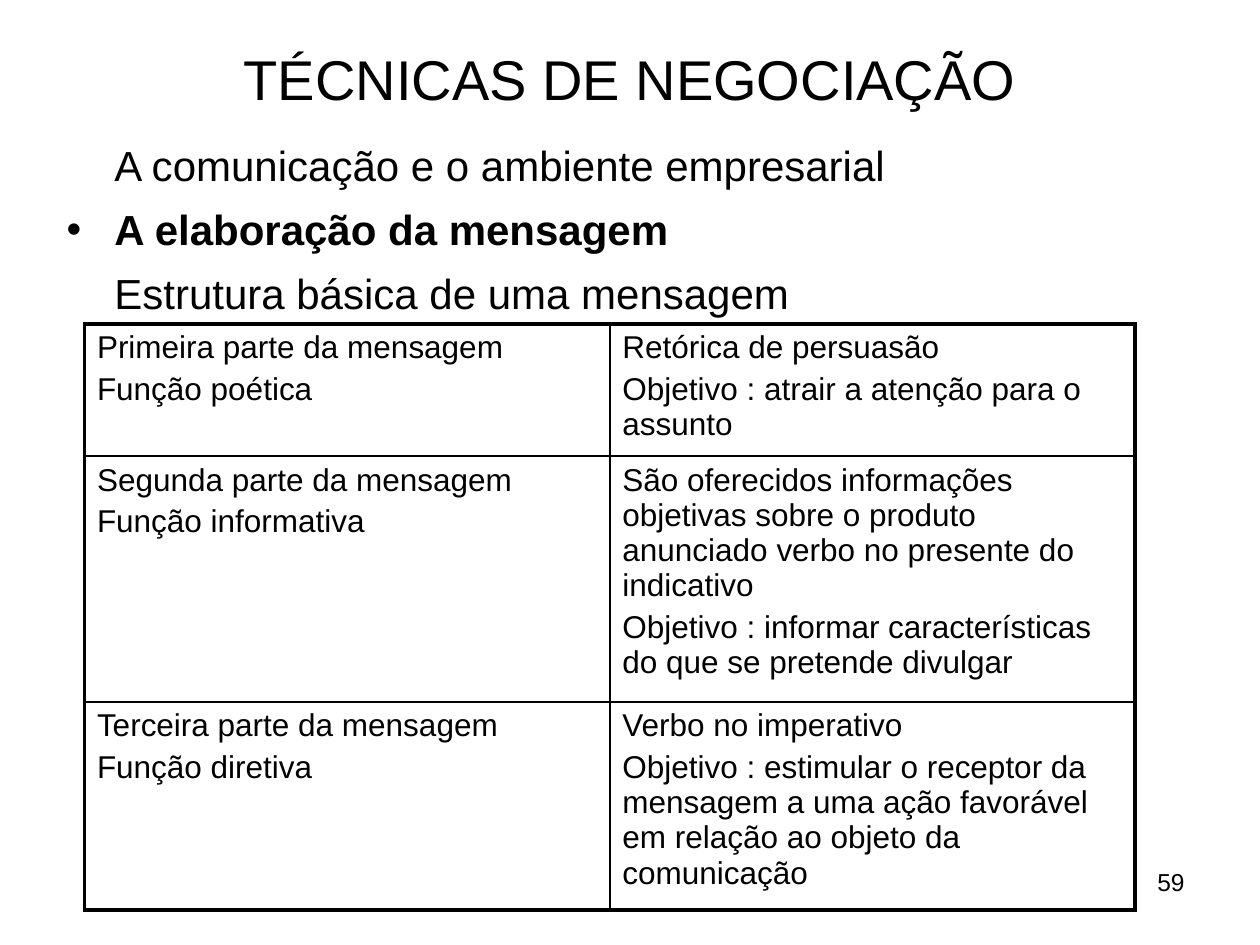
"""Build the slide on negotiation techniques and message structure."""
from dataclasses import dataclass

from lxml import etree
from pptx import Presentation, util as u
from pptx.dml import color
from pptx.enum import text
from pptx.oxml import ns

FONT = "Arial"
BLACK = "000000"
WHITE = "FFFFFF"
THICK, THIN = 2.25, 1
HANG = 0.38


@dataclass
class Style:
    """Describe the look of a block of text."""
    size: float
    align: text.PP_ALIGN = text.PP_ALIGN.LEFT
    line: float = 1.0
    gap: float = 0


@dataclass
class Box:
    """Describe a text box in inches."""
    left: float
    top: float
    width: float
    height: float
    lines: list[str]
    style: Style
    inset: float = 0.05


@dataclass
class Row:
    """Describe one table row."""
    height: float
    cells: list[list[str]]


BODY = Style(24, line=1.1, gap=4.8)
CELL = Style(18, gap=3.6)
TITLE = Box(0.5, 0.3, 9, 1.25, ["TÉCNICAS DE NEGOCIAÇÃO"],
            Style(32, text.PP_ALIGN.CENTER))
POINTS = Box(0.43, 0.91, 8.9, 1.57,
             ["A comunicação e o ambiente empresarial",
              "A elaboração da mensagem",
              "Estrutura básica de uma mensagem"], BODY, 0.16)
NUMBER = Box(7.17, 6.83, 2.33, 0.52, ["59"], Style(14, text.PP_ALIGN.RIGHT))
ROWS = [
    Row(0.99, [["Primeira parte da mensagem", "Função poética"],
               ["Retórica de persuasão",
                "Objetivo : atrair a atenção para o assunto"]]),
    Row(1.93, [["Segunda parte da mensagem", "Função informativa"],
               ["São oferecidos informações objetivas sobre o produto "
                "anunciado verbo no presente do indicativo",
                "Objetivo : informar características do que se pretende "
                "divulgar"]]),
    Row(1.55, [["Terceira parte da mensagem", "Função diretiva"],
               ["Verbo no imperativo",
                "Objetivo : estimular o receptor da mensagem a uma ação "
                "favorável em relação ao objeto da comunicação"]]),
]


def paint(fill, shade: str) -> None:
    """Fill with a solid hex colour."""
    fill.solid()
    fill.fore_color.rgb = color.RGBColor.from_string(shade)


def write(frame, lines: list[str], style: Style) -> None:
    """Write one paragraph per line and format it."""
    frame.text = "\n".join(lines)
    for i, para in enumerate(frame.paragraphs):
        para.alignment = style.align
        para.line_spacing = style.line
        para.space_before = u.Pt(style.gap if i else 0)
        for run in para.runs:
            run.font.size = u.Pt(style.size)
            run.font.name = FONT
            paint(run.font.fill, BLACK)


def add_box(slide, box: Box):
    """Add a text box and return its frame."""
    shape = slide.shapes.add_textbox(
        *map(u.Inches, (box.left, box.top, box.width, box.height)))
    frame = shape.text_frame
    frame.word_wrap = True
    frame.margin_top = u.Inches(box.inset)
    write(frame, box.lines, box.style)
    return frame


def indent(para, mark: str = "") -> None:
    """Indent a paragraph, hanging a bullet when given a mark."""
    props = para._p.get_or_add_pPr()
    props.set("marL", str(u.Inches(HANG)))
    props.set("indent", str(-u.Inches(HANG) if mark else 0))
    if mark:
        etree.SubElement(props, ns.qn("a:buFont"), typeface=FONT)
        etree.SubElement(props, ns.qn("a:buChar"), char=mark)


def edge(cell, widths: dict[str, float]) -> None:
    """Draw the borders of a cell, ahead of its fill."""
    props = cell._tc.get_or_add_tcPr()
    for i, (side, width) in enumerate(widths.items()):
        line = etree.Element(ns.qn(f"a:ln{side}"), w=str(u.Pt(width)))
        fill = etree.SubElement(line, ns.qn("a:solidFill"))
        etree.SubElement(fill, ns.qn("a:srgbClr"), val=BLACK)
        props.insert(i, line)


def add_grid(slide, rows: list[Row]) -> None:
    """Add the table with a thick frame and thin inner lines."""
    high, wide = len(rows), len(rows[0].cells)
    total = sum(row.height for row in rows)
    grid = slide.shapes.add_table(
        high, wide, *map(u.Inches, (0.67, 2.57, 8.34, total))).table
    grid.first_row = grid.horz_banding = False
    for r, row in enumerate(rows):
        grid.rows[r].height = u.Inches(row.height)
        for c, lines in enumerate(row.cells):
            cell = grid.cell(r, c)
            write(cell.text_frame, lines, CELL)
            paint(cell.fill, WHITE)
            outer = {"L": c == 0, "R": c == wide - 1,
                     "T": r == 0, "B": r == high - 1}
            edge(cell, {side: THICK if out else THIN
                        for side, out in outer.items()})


def main() -> None:
    """Build and save the slide."""
    deck = Presentation()
    deck.slide_width, deck.slide_height = u.Inches(10), u.Inches(7.5)
    slide = deck.slides.add_slide(deck.slide_layouts[6])
    paint(slide.background.fill, WHITE)
    add_box(slide, NUMBER)
    add_box(slide, TITLE)
    first, main_point, last = add_box(slide, POINTS).paragraphs
    indent(first)
    indent(main_point, "•")
    indent(last)
    main_point.runs[0].font.bold = True
    add_grid(slide, ROWS)
    deck.save("out.pptx")


if __name__ == "__main__":
    main()
